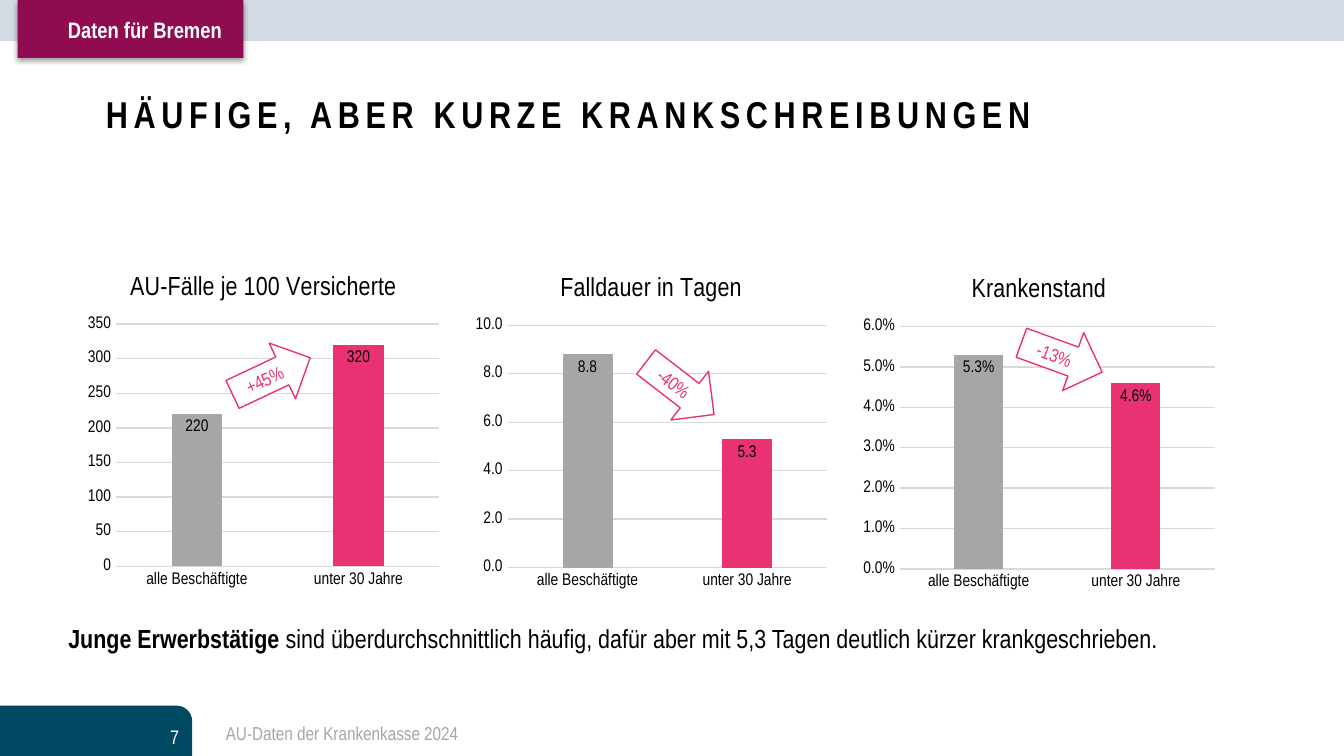
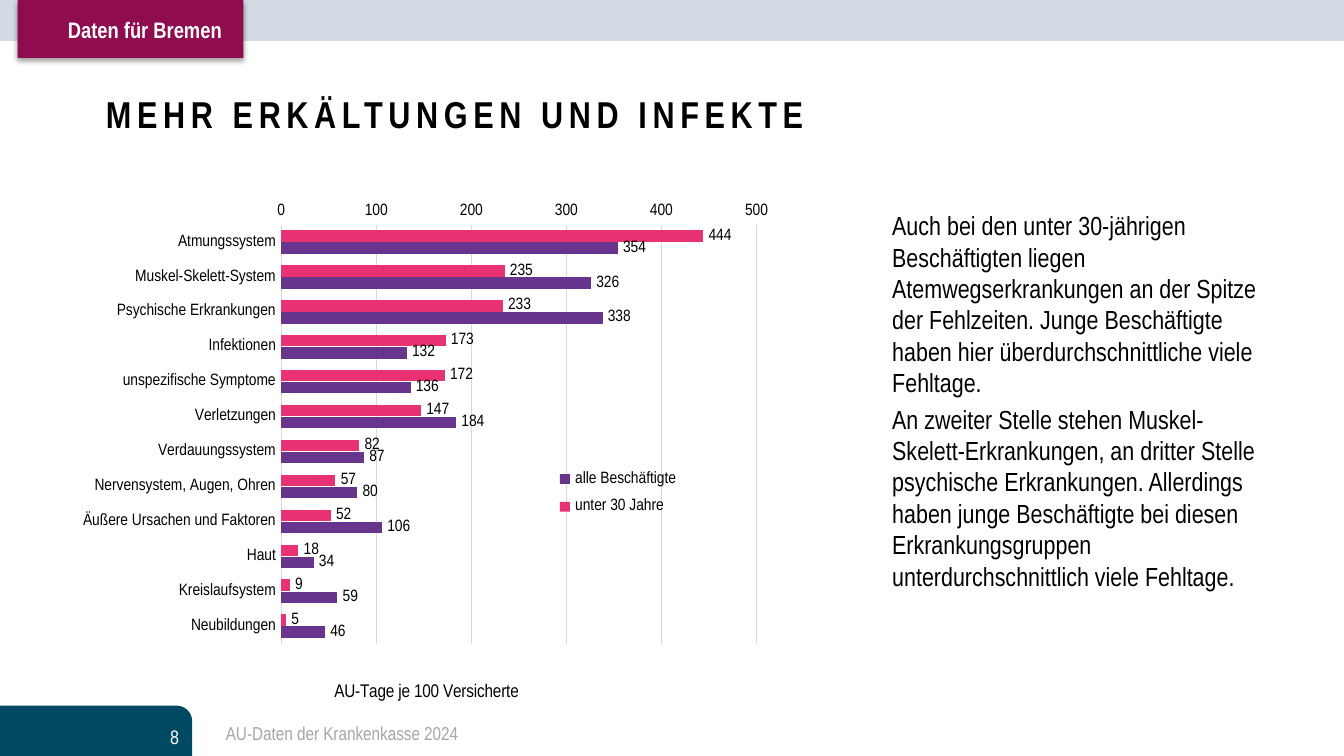
from lxml import etree
from pptx import Presentation
from pptx.chart.data import CategoryChartData
from pptx.dml.color import RGBColor
from pptx.enum.chart import (
    XL_AXIS_CROSSES as Crosses,
    XL_CHART_TYPE as ChartType,
    XL_LABEL_POSITION as LabelPosition,
    XL_LEGEND_POSITION as LegendPosition,
    XL_TICK_MARK as TickMark,
)
from pptx.enum.shapes import MSO_SHAPE as Preset
from pptx.enum.text import MSO_ANCHOR as Anchor, MSO_AUTO_SIZE as AutoSize, PP_ALIGN as Align
from pptx.oxml import parse_xml
from pptx.oxml.ns import nsdecls, qn
from pptx.util import Pt

FONT = "Arial Narrow"
BLACK, WHITE, GREY = "000000", "FFFFFF", "A6A6A6"
PINK, PURPLE, BERRY = "E83274", "68358C", "8E0C4F"
TEAL, BAND, GRID = "004963", "D3DCE4", "D9D9D9"


def rgb(value):
    return RGBColor.from_string(value)


def assign(target, values):
    for name, value in values.items():
        setattr(target, name, value)


def style_font(font, size, color=BLACK, bold=False):
    assign(font, {"name": FONT, "size": Pt(size), "bold": bold})
    font.color.rgb = rgb(color)


def fill(target, color):
    target.format.fill.solid()
    target.format.fill.fore_color.rgb = rgb(color)


def place_in_chart(chart, query, position, **fractions):
    """Give a chart part a fixed place, as fractions of the chart's size."""
    parent = chart._chartSpace.xpath(query)[0]
    layout = parent.find(qn("c:layout"))
    if layout is not None:
        parent.remove(layout)
    layout = parse_xml(f"<c:layout {nsdecls('c')}><c:manualLayout/></c:layout>")
    settings = {"xMode": "edge", "yMode": "edge", **fractions}
    if query.endswith("plotArea"):
        settings = {"layoutTarget": "inner", **settings}
    for name, value in settings.items():
        etree.SubElement(layout[0], qn(f"c:{name}")).set("val", str(value))
    parent.insert(position, layout)


class Deck:
    """Holds the presentation, its shared style and the current slide."""

    def __init__(self):
        self.presentation = Presentation()
        assign(self.presentation, {"slide_width": Pt(720), "slide_height": Pt(405)})
        self.slide = None

    def add_slide(self, title, number):
        self.slide = self.presentation.slides.add_slide(self.presentation.slide_layouts[6])
        self.shape(Preset.RECTANGLE, (0, 0, 720, 22), BAND)
        corner = self.shape(Preset.ROUND_1_RECTANGLE, (0, 378, 103, 27), TEAL)
        corner.adjustments[0] = 0.31
        self.text((49.7, 21.6, 620.6, 78.5), [[(title, True)]], 20, anchor=Anchor.MIDDLE, spacing=3)
        self.text((24.5, 383.8, 78.5, 21.6), [[(str(number), False)]], 10.5, WHITE,
                  Align.RIGHT, Anchor.MIDDLE)
        self.text((117.4, 383, 520, 18), [[("AU-Daten der Krankenkasse 2024", False)]], 10, GREY,
                  inset=3.6)
        tag = self.shape(Preset.RECTANGLE, (9.4, 0, 121, 31), BERRY)
        self.shadow(tag)
        self.text((24.5, 5, 101.5, 21.6), [[("Daten für Bremen", True)]], 12, WHITE, Align.RIGHT)

    def shape(self, preset, box, color, line=None):
        shape = self.slide.shapes.add_shape(preset, *map(Pt, box))
        shape.shadow.inherit = False
        shape.fill.solid()
        shape.fill.fore_color.rgb = rgb(color)
        if line:
            shape.line.color.rgb = rgb(line)
            shape.line.width = Pt(0.75)
        else:
            shape.line.fill.background()
        return shape

    def shadow(self, shape):
        effects = shape._element.spPr.find(qn("a:effectLst"))
        effects.append(parse_xml(
            f'<a:outerShdw {nsdecls("a")} blurRad="{Pt(3.1)}" dist="{Pt(1.6)}" dir="5400000" '
            'rotWithShape="0"><a:srgbClr val="000000"><a:alpha val="38000"/></a:srgbClr>'
            '</a:outerShdw>'))

    def text(self, box, paragraphs, size, color=BLACK, align=Align.LEFT, anchor=Anchor.TOP,
             spacing=0, inset=7.2, space_before=0):
        """Add a text box; each paragraph is a list of (text, bold) runs."""
        frame = self.slide.shapes.add_textbox(*map(Pt, box)).text_frame
        assign(frame, {"word_wrap": True, "auto_size": AutoSize.NONE, "vertical_anchor": anchor,
                       "margin_left": Pt(inset), "margin_right": Pt(inset)})
        for index, runs in enumerate(paragraphs):
            paragraph = frame.add_paragraph() if index else frame.paragraphs[0]
            paragraph.alignment = align
            if index:
                paragraph.space_before = Pt(space_before)
            for content, bold in runs:
                run = paragraph.add_run()
                run.text = content
                style_font(run.font, size, color, bold)
                if spacing:
                    run._r.get_or_add_rPr().set("spc", str(spacing * 100))

    def arrow(self, left, top, rotation, label):
        arrow = self.shape(Preset.RIGHT_ARROW, (left, top, 46, 33), WHITE, PINK)
        arrow.rotation = rotation
        assign(arrow.text_frame, {"word_wrap": False, "vertical_anchor": Anchor.MIDDLE})
        paragraph = arrow.text_frame.paragraphs[0]
        paragraph.alignment = Align.CENTER
        run = paragraph.add_run()
        run.text = label
        style_font(run.font, 10, PINK)

    def chart(self, kind, box, categories, series, gap, overlap, label_position,
              number_format="General"):
        """Add a bar or column chart; series holds (name, values, color) items."""
        data = CategoryChartData(number_format=number_format)
        data.categories = categories
        for name, values, _ in series:
            data.add_series(name, values)
        chart = self.slide.shapes.add_chart(kind, *map(Pt, box), data).chart
        style_font(chart.font, 10)
        assign(chart, {"has_legend": False, "has_title": False})
        plot = chart.plots[0]
        assign(plot, {"gap_width": gap, "overlap": overlap, "vary_by_categories": False,
                      "has_data_labels": True})
        numbers = {"number_format": number_format, "number_format_is_linked": False}
        assign(plot.data_labels, {"show_value": True, "position": label_position, **numbers})
        style_font(plot.data_labels.font, 9)
        for bars, (_, _, color) in zip(plot.series, series):
            fill(bars, color)
            bars.invert_if_negative = False
        for axis in (chart.category_axis, chart.value_axis):
            assign(axis, {"major_tick_mark": TickMark.NONE, "minor_tick_mark": TickMark.NONE})
            style_font(axis.tick_labels.font, 9)
        assign(chart.value_axis.tick_labels, numbers)
        chart.value_axis.has_major_gridlines = True
        chart.value_axis.format.line.fill.background()
        for line in (chart.category_axis.format.line, chart.value_axis.major_gridlines.format.line):
            line.color.rgb = rgb(GRID)
            line.width = Pt(0.75)
        return chart

    def comparison_chart(self, box, title, values, number_format, unit):
        chart = self.chart(ChartType.COLUMN_CLUSTERED, box, ["alle Beschäftigte", "unter 30 Jahre"],
                           [(title, values, PINK)], 219, -27, LabelPosition.INSIDE_END,
                           number_format)
        self.chart_title(chart, title, 14)
        chart.value_axis.minimum_scale = 0
        if unit:
            chart.value_axis.major_unit = unit
        for index, color in enumerate((GREY, PINK)):
            fill(chart.plots[0].series[0].points[index], color)

    def chart_title(self, owner, title, size):
        """Title a chart or an axis."""
        owner.has_title = True
        heading = owner.chart_title if hasattr(owner, "chart_title") else owner.axis_title
        run = heading.text_frame.paragraphs[0].add_run()
        run.text = title
        style_font(run.font, size)


def build_sick_notes(deck):
    deck.add_slide("HÄUFIGE, ABER KURZE KRANKSCHREIBUNGEN", 7)
    deck.text((29.5, 329.8, 602, 24.5), [[
        ("Junge Erwerbstätige ", True),
        ("sind überdurchschnittlich häufig, dafür aber mit 5,3 Tagen deutlich kürzer "
         "krankgeschrieben.", False),
    ]], 14)
    comparisons = [
        ("AU-Fälle je 100 Versicherte", (220, 320), "0", None),
        ("Falldauer in Tagen", (8.8, 5.3), "0.0", 2),
        ("Krankenstand", (0.053, 0.046), "0.0%", None),
    ]
    for index, comparison in enumerate(comparisons):
        deck.comparison_chart((43.2 + 207.7 * index, 136 + 0.7 * index, 196, 183), *comparison)
    for arrow in [(341.3, 191.5, 37.7, "-40%"), (122.4, 185, 334.7, "+45%"),
                  (545.8, 175, 20, "-13%")]:
        deck.arrow(*arrow)


def build_diagnoses(deck):
    deck.add_slide("MEHR ERKÄLTUNGEN UND INFEKTE", 8)
    deck.text((470.9, 108.7, 216.7, 221.8), [
        [("Auch bei den unter 30-jährigen Beschäftigten liegen Atemwegserkrankungen an der Spitze "
          "der Fehlzeiten. Junge Beschäftigte haben hier überdurchschnittliche viele Fehltage.",
          False)],
        [("An zweiter Stelle stehen Muskel-Skelett-Erkrankungen, an dritter Stelle psychische "
          "Erkrankungen. Allerdings haben junge Beschäftigte bei diesen Erkrankungsgruppen "
          "unterdurchschnittlich viele Fehltage.", False)],
    ], 14, space_before=2.8)
    diagnoses = [
        ("Atmungssystem", 444, 354),
        ("Muskel-Skelett-System", 235, 326),
        ("Psychische Erkrankungen", 233, 338),
        ("Infektionen", 173, 132),
        ("unspezifische Symptome", 172, 136),
        ("Verletzungen", 147, 184),
        ("Verdauungssystem", 82, 87),
        ("Nervensystem, Augen, Ohren", 57, 80),
        ("Äußere Ursachen und Faktoren", 52, 106),
        ("Haut", 18, 34),
        ("Kreislaufsystem", 9, 59),
        ("Neubildungen", 5, 46),
    ]
    names, young, everyone = zip(*diagnoses)
    chart = deck.chart(ChartType.BAR_CLUSTERED, (36.7, 108.7, 380, 280), names,
                       [("unter 30 Jahre", young, PINK), ("alle Beschäftigte", everyone, PURPLE)],
                       100, -5, LabelPosition.OUTSIDE_END)
    assign(chart.category_axis, {"reverse_order": True, "crosses": Crosses.MAXIMUM})
    chart.value_axis.major_unit = 100
    deck.chart_title(chart.value_axis, "AU-Tage je 100 Versicherte", 10)
    chart.has_legend = True
    assign(chart.legend, {"position": LegendPosition.RIGHT, "include_in_layout": True})
    style_font(chart.legend.font, 9)
    place_in_chart(chart, "c:chart/c:plotArea", 0, x=0.3, y=0.02, w=0.67, h=0.82)
    place_in_chart(chart, "c:chart/c:legend", 1, x=0.65, y=0.48, w=0.25, h=0.13)
    place_in_chart(chart, ".//c:valAx/c:title", 1, x=0.37, y=0.91)


def main():
    deck = Deck()
    build_sick_notes(deck)
    build_diagnoses(deck)
    deck.presentation.save("out.pptx")


if __name__ == "__main__":
    main()
